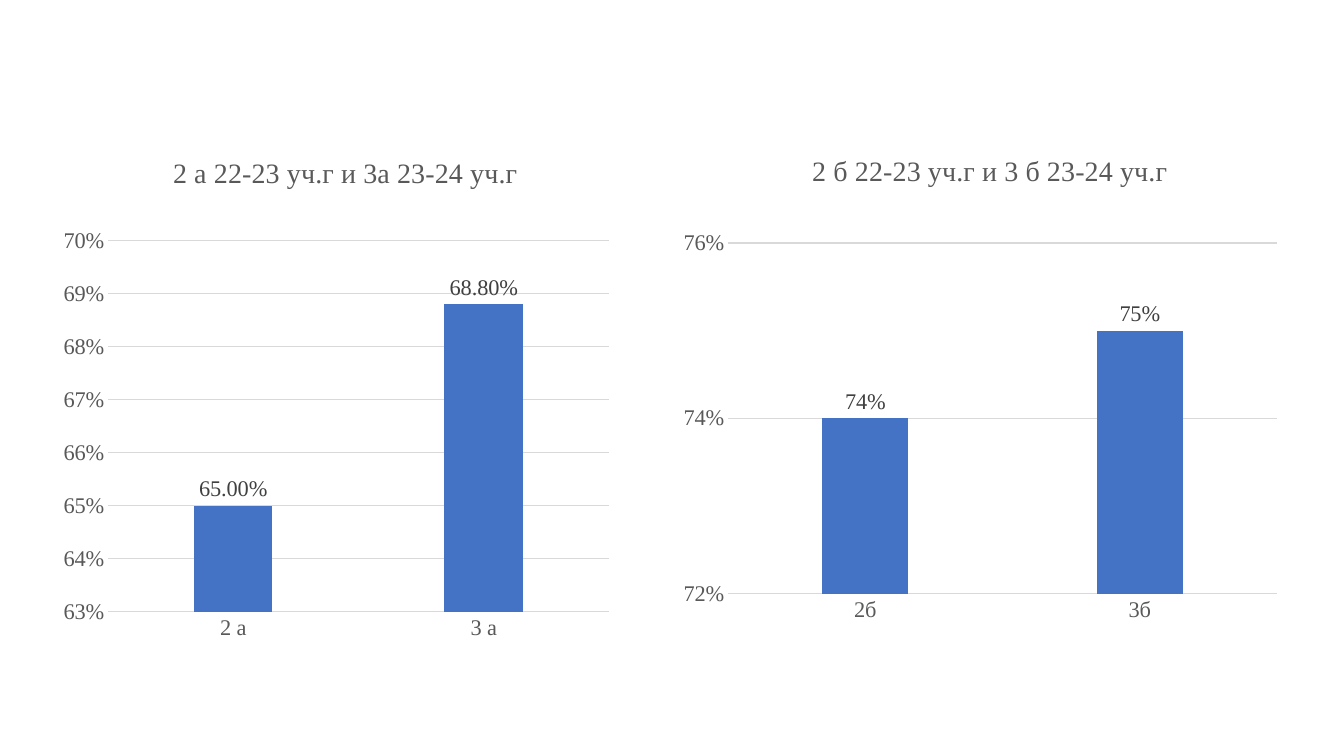
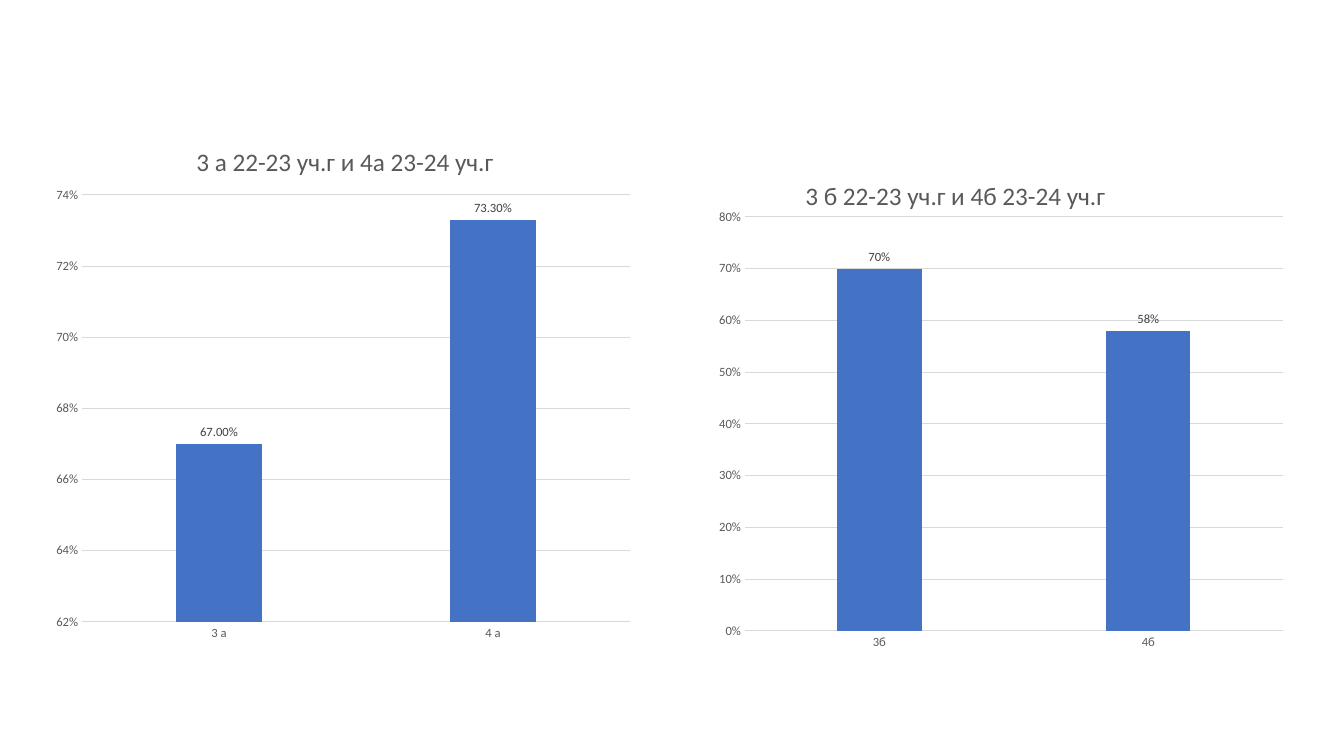
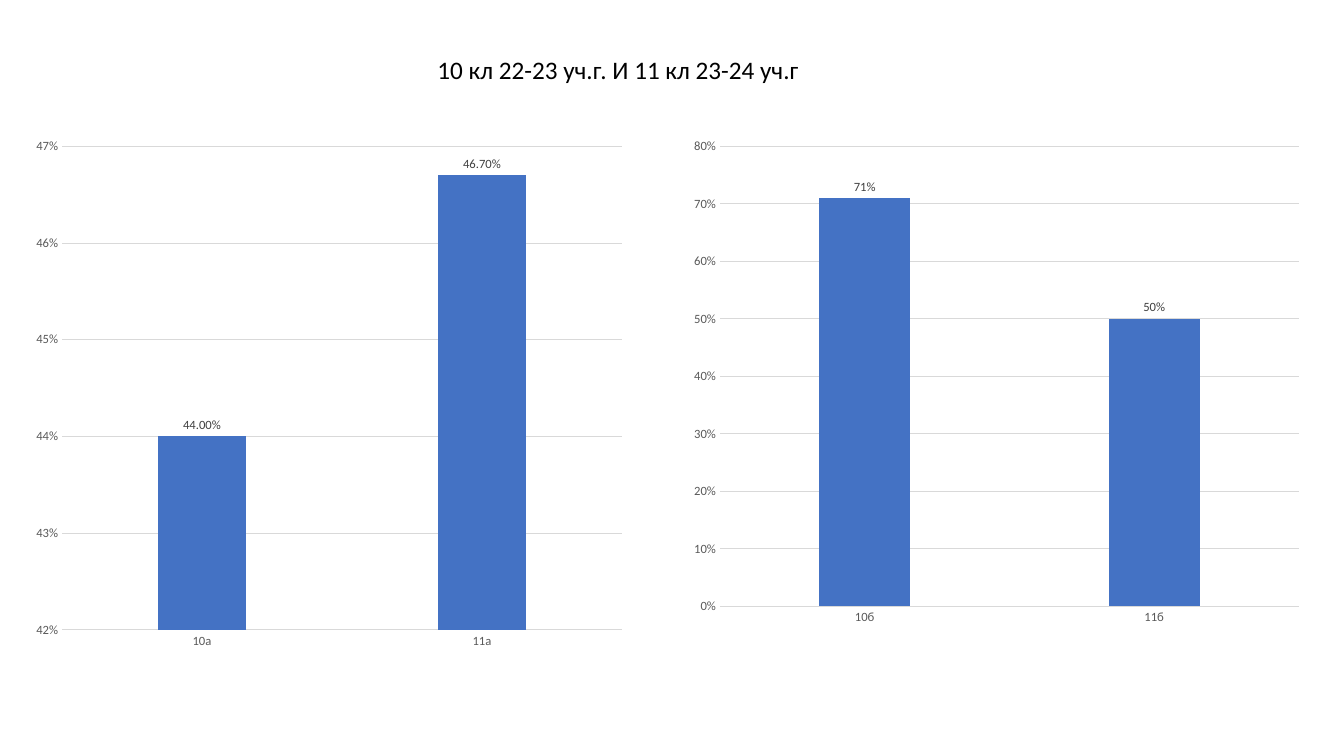
from lxml.etree import SubElement
from pptx import Presentation
from pptx.chart.data import CategoryChartData
from pptx.dml.color import RGBColor
from pptx.enum.chart import XL_CHART_TYPE, XL_LABEL_POSITION, XL_TICK_MARK
from pptx.enum.text import MSO_ANCHOR, MSO_AUTO_SIZE, PP_ALIGN
from pptx.oxml.ns import qn
from pptx.util import Pt

BLUE = RGBColor(0x44, 0x72, 0xC4)
BLACK = RGBColor(0, 0, 0)
DARK = RGBColor(0x40, 0x40, 0x40)
GREY = RGBColor(0x59, 0x59, 0x59)
PALE = RGBColor(0xD9, 0xD9, 0xD9)

SERIF = {"face": "Times New Roman", "head": 20, "body": 16}
SANS = {"face": "Calibri", "head": 18, "body": 9}
HEAD = "10 кл 22-23 уч.г. И 11 кл 23-24 уч.г"

SLIDES = [
    {"style": SERIF, "charts": [
        {"box": (37.5, 94.3, 406, 371), "plot": (77.1, 172.1, 358, 265),
         "title": ("2 а 22-23 уч.г и 3а 23-24 уч.г", 120, 107),
         "data": {"2 а": 0.65, "3 а": 0.688}, "scale": (0.63, 0.7, 0.01), "form": "0.00%"},
        {"box": (479.5, 91.4, 441.4, 360.7), "plot": (520, 173.6, 392.1, 250.7),
         "title": ("2 б 22-23 уч.г и 3 б 23-24 уч.г", 576.5, 106),
         "data": {"2б": 0.74, "3б": 0.75}, "scale": (0.72, 0.76, 0.02), "form": "0%"}]},
    {"style": SANS, "charts": [
        {"box": (31, 86.4, 427, 378.7), "plot": (58.6, 139.3, 391.4, 305),
         "title": ("3 а 22-23 уч.г и 4а 23-24 уч.г", 137, 100),
         "data": {"3 а": 0.67, "4 а": 0.733}, "scale": (0.62, 0.74, 0.02), "form": "0.00%"},
        {"box": (504.7, 102.2, 419.8, 369.4), "plot": (532.1, 155, 384.3, 295.7),
         "title": ("3 б 22-23 уч.г и 4б 23-24 уч.г", 572, 124),
         "data": {"3б": 0.7, "4б": 0.58}, "scale": (0, 0.8, 0.1), "form": "0%"}]},
    {"style": SANS, "head": HEAD, "charts": [
        {"box": (17.3, 92.2, 436.3, 378.7), "plot": (44.3, 104.6, 400, 345.4),
         "data": {"10а": 0.44, "11а": 0.467}, "scale": (0.42, 0.47, 0.01), "form": "0.00%"},
        {"box": (486.7, 92.2, 450, 362.2), "plot": (514.3, 104.6, 413.6, 328.6),
         "data": {"10б": 0.71, "11б": 0.5}, "scale": (0, 0.8, 0.1), "form": "0%"}]},
]


def apply(item, **values):
    """Set each named attribute of an object."""
    for name, value in values.items():
        setattr(item, name, value)


def set_font(font, face, size, ink):
    """Format a font."""
    apply(font, name=face, size=Pt(size), bold=False)
    font.color.rgb = ink


def set_line(line):
    """Make a thin pale line."""
    line.width = Pt(0.75)
    line.color.rgb = PALE


def lay_out(node, index, values):
    """Give a chart part a fixed place, as shares of the chart."""
    for old in node.findall(qn("c:layout")):
        node.remove(old)
    layout = SubElement(node, qn("c:layout"))
    node.insert(index, layout)
    manual = SubElement(layout, qn("c:manualLayout"))
    for name, value in values.items():
        SubElement(manual, qn("c:" + name)).set("val", str(value))


def share(place, box):
    """Turn a place on the slide into shares of the chart box."""
    left, top, wide, high = box
    parts = {"x": (place[0] - left) / wide, "y": (place[1] - top) / high}
    if len(place) == 4:
        parts.update(w=place[2] / wide, h=place[3] / high)
    return {name: round(part, 4) for name, part in parts.items()}


def add_title(chart, title, box, style):
    """Add the heading of a chart."""
    text, left, top = title
    frame = chart.chart_title.text_frame
    frame.text = text
    set_font(frame.paragraphs[0].runs[0].font, style["face"], style["head"], GREY)
    node = chart._chartSpace.find(".//" + qn("c:title"))
    lay_out(node, 1, {"xMode": "edge", "yMode": "edge", **share((left, top), box)})


def set_axes(chart, scale, style):
    """Format both axes and the grid."""
    for axis in (chart.category_axis, chart.value_axis):
        apply(axis, major_tick_mark=XL_TICK_MARK.NONE, minor_tick_mark=XL_TICK_MARK.NONE)
        set_font(axis.tick_labels.font, style["face"], style["body"], GREY)
    set_line(chart.category_axis.format.line)
    axis = chart.value_axis
    low, high, step = scale
    apply(axis, minimum_scale=low, maximum_scale=high, major_unit=step)
    apply(axis.tick_labels, number_format="0%", number_format_is_linked=False)
    axis.format.line.fill.background()
    set_line(axis.major_gridlines.format.line)


def set_bars(chart, form, style):
    """Format the bars and their labels."""
    plot = chart.plots[0]
    apply(plot, gap_width=219, overlap=-27, vary_by_categories=False, has_data_labels=True)
    fill = plot.series[0].format.fill
    fill.solid()
    fill.fore_color.rgb = BLUE
    labels = plot.data_labels
    apply(labels, show_value=True, position=XL_LABEL_POSITION.OUTSIDE_END,
          number_format=form, number_format_is_linked=False)
    set_font(labels.font, style["face"], style["body"], DARK)


def add_bars(slide, item, style):
    """Add one column chart."""
    box = item["box"]
    data = CategoryChartData(number_format=item["form"])
    data.categories = list(item["data"])
    data.add_series("Series 1", list(item["data"].values()))
    chart = slide.shapes.add_chart(XL_CHART_TYPE.COLUMN_CLUSTERED, *map(Pt, box), data).chart
    apply(chart, has_legend=False, has_title="title" in item)
    set_font(chart.font, style["face"], style["body"], BLACK)
    set_axes(chart, item["scale"], style)
    set_bars(chart, item["form"], style)
    if "title" in item:
        add_title(chart, item["title"], box, style)
    area = chart._chartSpace.find(".//" + qn("c:plotArea"))
    lay_out(area, 0, {"layoutTarget": "inner", "xMode": "edge", "yMode": "edge",
                      **share(item["plot"], box)})


def set_head(slide, text, style):
    """Place and format the slide title."""
    title = slide.shapes.title
    apply(title, left=Pt(305.3), top=Pt(35.3), width=Pt(284.4), height=Pt(28.8))
    frame = title.text_frame
    frame.text = text
    apply(frame, auto_size=MSO_AUTO_SIZE.NONE, word_wrap=False,
          vertical_anchor=MSO_ANCHOR.TOP)
    line = frame.paragraphs[0]
    line.alignment = PP_ALIGN.LEFT
    set_font(line.runs[0].font, style["face"], style["head"], BLACK)


def main():
    """Build the deck."""
    deck = Presentation()
    apply(deck, slide_width=Pt(960), slide_height=Pt(540))
    for page in SLIDES:
        slide = deck.slides.add_slide(deck.slide_layouts[5 if "head" in page else 6])
        for item in page["charts"]:
            add_bars(slide, item, page["style"])
        if "head" in page:
            set_head(slide, page["head"], page["style"])
    deck.save("out.pptx")


if __name__ == "__main__":
    main()
